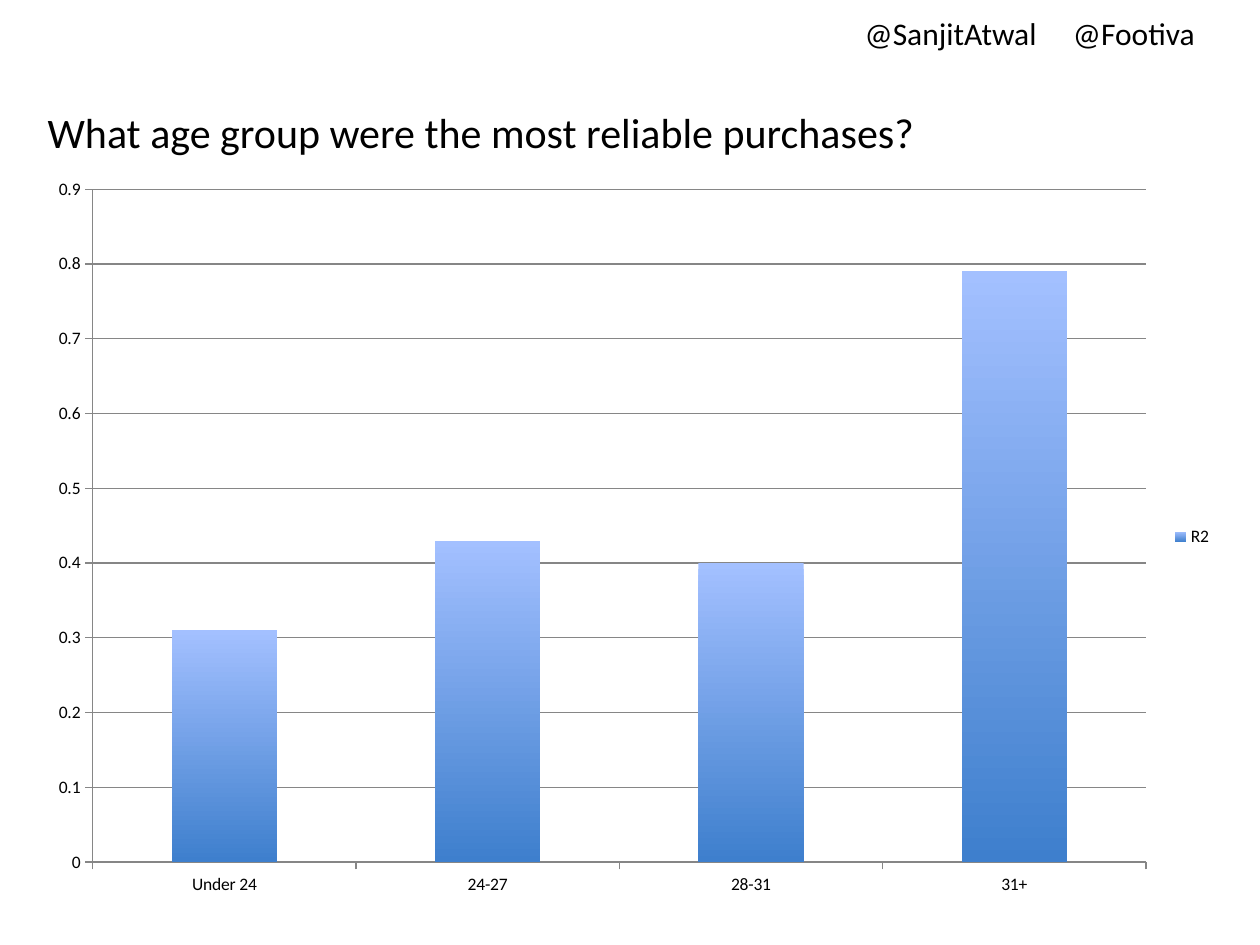
import pptx
import pptx.chart.data
import pptx.dml.color
import pptx.enum.chart
import pptx.enum.text
import pptx.util
from lxml import etree

Pt = pptx.util.Pt
FONT = "Calibri"
BLACK, GREY = "000000", "868686"
BAR_TOP, BAR_BOTTOM = "A3C0FF", "3E7FCD"


def color(value):
    return pptx.dml.color.RGBColor.from_string(value)


def set_font(font, size):
    for name, value in {"name": FONT, "size": Pt(size), "bold": False}.items():
        setattr(font, name, value)
    font.color.rgb = color(BLACK)


def place(sp, box):
    for name, value in zip(("left", "top", "width", "height"), box):
        setattr(sp, name, Pt(value))


def set_text(sp, text, size):
    """Write one left-aligned line and return its paragraph."""
    tf = sp.text_frame
    tf.word_wrap = True
    tf.auto_size = pptx.enum.text.MSO_AUTO_SIZE.NONE
    tf.vertical_anchor = pptx.enum.text.MSO_ANCHOR.TOP
    p = tf.paragraphs[0]
    p.alignment = pptx.enum.text.PP_ALIGN.LEFT
    r = p.add_run()
    r.text = text
    set_font(r.font, size)
    return p


def add_title(s, box, text):
    sp = s.shapes.title
    place(sp, box)
    set_text(sp, text, 24)


def add_handles(s, box, handles, tab):
    """Place the handles on one line, the second at a tab stop."""
    sp = s.shapes.add_textbox(*map(Pt, box))
    p = set_text(sp, "\t".join(handles), 18)
    ns = pptx.oxml.ns.qn
    tabs = etree.SubElement(p._p.get_or_add_pPr(), ns("a:tabLst"))
    etree.SubElement(tabs, ns("a:tab"), pos=str(Pt(tab)), algn="l")


def style_axis(axis):
    axis.major_tick_mark = pptx.enum.chart.XL_TICK_MARK.OUTSIDE
    axis.minor_tick_mark = pptx.enum.chart.XL_TICK_MARK.NONE
    style_line(axis.format.line)
    set_font(axis.tick_labels.font, 10)


def style_line(line):
    line.width = Pt(0.75)
    line.color.rgb = color(GREY)


def add_age_chart(s, box, name, values):
    data = pptx.chart.data.CategoryChartData()
    data.categories = list(values)
    data.add_series(name, list(values.values()))
    kind = pptx.enum.chart.XL_CHART_TYPE.COLUMN_CLUSTERED
    chart = s.shapes.add_chart(kind, *map(Pt, box), data).chart
    chart.has_title = False
    set_font(chart.font, 10)

    chart.has_legend = True
    chart.legend.position = pptx.enum.chart.XL_LEGEND_POSITION.RIGHT
    chart.legend.include_in_layout = False
    set_font(chart.legend.font, 10)

    axis = chart.value_axis
    for a in (chart.category_axis, axis):
        style_axis(a)
    for key, value in {"minimum_scale": 0, "maximum_scale": 0.9, "major_unit": 0.1}.items():
        setattr(axis, key, value)
    axis.has_major_gridlines = True
    style_line(axis.major_gridlines.format.line)

    plot = chart.plots[0]
    plot.gap_width = 150
    plot.vary_by_categories = False
    fill = plot.series[0].format.fill
    fill.gradient()
    fill.gradient_angle = 270
    for stop, value in zip(fill.gradient_stops, (BAR_TOP, BAR_BOTTOM)):
        stop.color.rgb = color(value)


def main():
    prs = pptx.Presentation()
    prs.slide_width, prs.slide_height = Pt(720), Pt(540)
    s = prs.slides.add_slide(prs.slide_layouts[5])
    add_title(s, (20, 57.5, 517, 36), "What age group were the most reliable purchases?")
    add_age_chart(s, (20, 94, 680, 425.5), "R2",
                  {"Under 24": 0.31, "24-27": 0.43, "28-31": 0.4, "31+": 0.79})
    add_handles(s, (487, 4.5, 217, 29), ("@SanjitAtwal", "@Footiva"), 119)
    prs.save("out.pptx")


if __name__ == "__main__":
    main()
